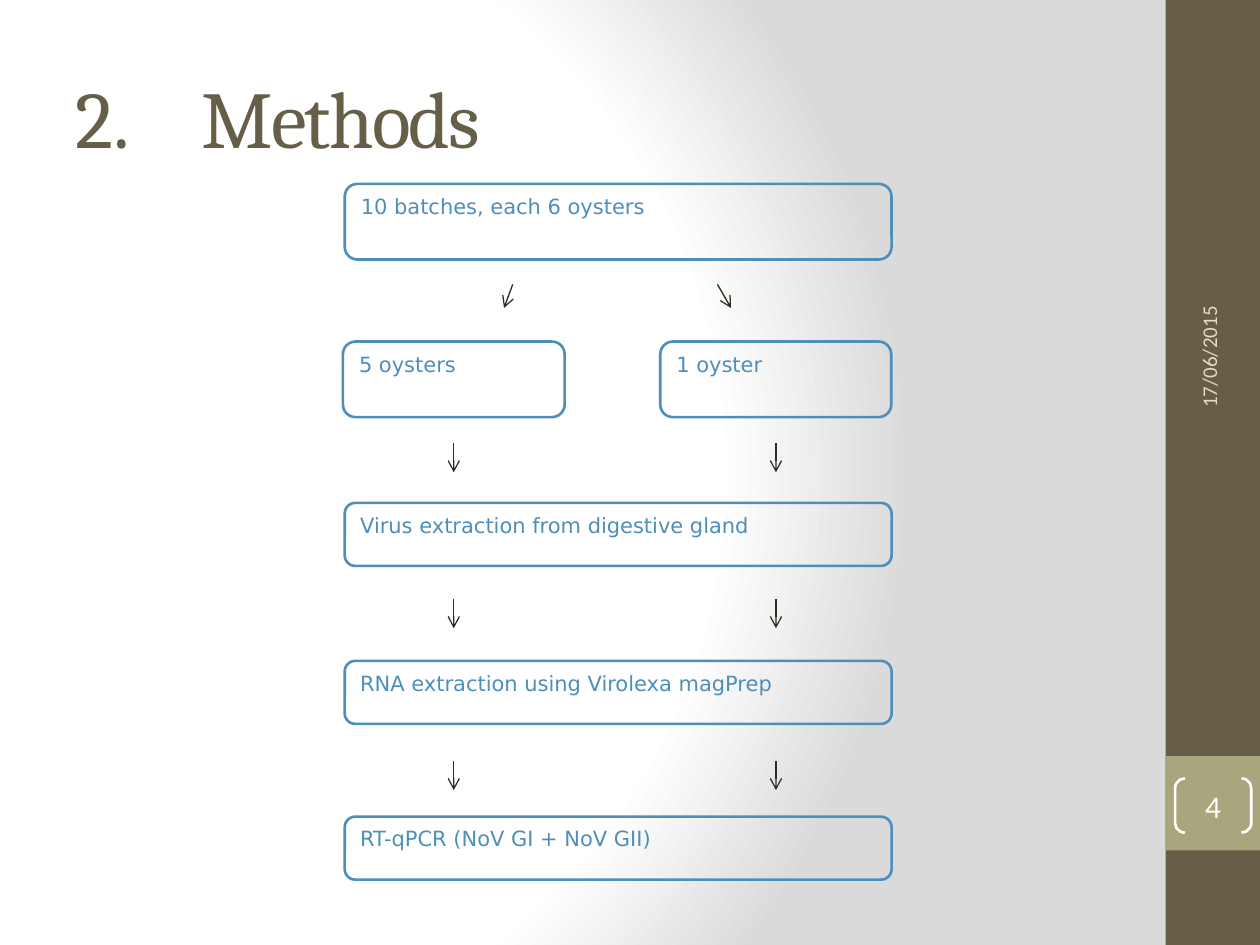
from dataclasses import dataclass

from pptx import Presentation
from pptx.dml.color import RGBColor
from pptx.enum.shapes import MSO_CONNECTOR, MSO_SHAPE
from pptx.enum.text import MSO_ANCHOR, PP_ALIGN
from pptx.oxml import parse_xml
from pptx.oxml.ns import nsdecls, qn
from pptx.oxml.xmlchemy import OxmlElement
from pptx.util import Pt

RECT, ROUND = MSO_SHAPE.RECTANGLE, MSO_SHAPE.ROUNDED_RECTANGLE
BRACKET = MSO_SHAPE.DOUBLE_BRACKET
STRAIGHT = MSO_CONNECTOR.STRAIGHT
TOP, MIDDLE = MSO_ANCHOR.TOP, MSO_ANCHOR.MIDDLE
LEFT, CENTER = PP_ALIGN.LEFT, PP_ALIGN.CENTER


@dataclass(frozen=True)
class Theme:
    brown: str = "675E47"
    olive: str = "A9A57C"
    cream: str = "DFDCB7"
    white: str = "FFFFFF"
    gray: str = "DADADA"
    blue: str = "4E8FBA"
    ink: str = "2F2B20"
    head: str = "Cambria"
    body: str = "Calibri"
    flow: str = "DejaVu Sans"
    large: float = 46
    mid: float = 18
    small: float = 12
    thick: float = 1.5
    thin: float = 0.75


def color(code):
    return RGBColor.from_string(code)


def write(shape, text, font, size, tint, align=LEFT, anchor=TOP, inset=None):
    frame = shape.text_frame
    frame.word_wrap = True
    frame.vertical_anchor = anchor
    if inset is not None:
        frame.margin_left = frame.margin_right = Pt(inset)
        frame.margin_top = frame.margin_bottom = Pt(inset)
    para = frame.paragraphs[0]
    para.alignment = align
    run = para.add_run()
    run.text = text
    run.font.name = font
    run.font.size = Pt(size)
    run.font.color.rgb = color(tint)
    return para, run


class Deck:
    def __init__(self, theme):
        self.theme = theme
        self.file = Presentation()
        self.file.slide_width, self.file.slide_height = Pt(720), Pt(540)
        self.slide = self.file.slides.add_slide(self.file.slide_layouts[6])

    def backdrop(self):
        t = self.theme
        self.slide.background.fill.solid()
        props = self.slide.element.find(".//" + qn("p:bgPr"))
        stops = "".join(
            f'<a:gs pos="{pos * 1000}"><a:srgbClr val="{code}"/></a:gs>'
            for pos, code in ((0, t.white), (75, t.white), (100, t.gray)))
        props.replace(props[0], parse_xml(
            f'<a:gradFill {nsdecls("a")} rotWithShape="1"><a:gsLst>{stops}</a:gsLst>'
            '<a:path path="circle"><a:fillToRect l="20000" t="50000" r="100000" '
            'b="50000"/></a:path></a:gradFill>'))

    def shape(self, kind, x, y, w, h, fill=None, line=None):
        item = self.slide.shapes.add_shape(kind, Pt(x), Pt(y), Pt(w), Pt(h))
        item.shadow.inherit = False
        if fill:
            item.fill.solid()
            item.fill.fore_color.rgb = color(fill)
        else:
            item.fill.background()
        if line:
            item.line.color.rgb = color(line)
            item.line.width = Pt(self.theme.thick)
        else:
            item.line.fill.background()
        return item

    def label(self, x, y, w, h, text, turn=0, **style):
        box = self.slide.shapes.add_textbox(Pt(x), Pt(y), Pt(w), Pt(h))
        box.rotation = turn
        return write(box, text, **style)

    def title(self, text, start):
        t = self.theme
        para, run = self.label(36, 21.6, 600, 90, text, font=t.head,
                               size=t.large, tint=t.brown, anchor=MIDDLE)
        run.font._element.set("spc", "-100")
        props = para._p.get_or_add_pPr()
        props.set("marL", str(Pt(72)))
        props.set("indent", str(Pt(-72)))
        number = OxmlElement("a:buAutoNum")
        number.set("type", "arabicPeriod")
        number.set("startAt", str(start))
        props.append(number)

    def step(self, x, y, w, h, text):
        t = self.theme
        box = self.shape(ROUND, x, y, w, h, line=t.blue)
        write(box, text, font=t.flow, size=t.small, tint=t.blue)

    def arrow(self, x1, y1, x2, y2):
        t = self.theme
        item = self.slide.shapes.add_connector(
            STRAIGHT, Pt(x1), Pt(y1), Pt(x2), Pt(y2))
        item.line.color.rgb = color(t.ink)
        item.line.width = Pt(t.thin)
        tip = OxmlElement("a:tailEnd")
        tip.set("type", "arrow")
        item.line._get_or_add_ln().append(tip)
        item._element.spPr.append(OxmlElement("a:effectLst"))


def main():
    t = Theme()
    deck = Deck(t)
    deck.backdrop()

    # Side bar with date and page number
    deck.shape(RECT, 666, 0, 54, 540, fill=t.brown)
    deck.shape(RECT, 666, 432, 54, 54, fill=t.olive)
    deck.label(594.7, 129.6, 192, 28.8, "17/06/2015", turn=270, font=t.body,
               size=t.small, tint=t.cream, anchor=MIDDLE)
    page = deck.shape(BRACKET, 671.5, 444.8, 43.5, 31, line=t.white)
    page.adjustments[0] = 0.18
    write(page, "4", font=t.body, size=t.mid, tint=t.white,
          align=CENTER, anchor=MIDDLE, inset=0)

    deck.title("Methods", start=2)

    # Batches and how they are split
    left, wide, tall, low = 197, 312.5, 43.2, 36
    deck.step(left, 105.1, wide, tall, "10 batches, each 6 oysters")
    deck.step(196, 195.2, 126.7, tall, "5 oysters")
    deck.step(377.3, 195.2, 132, tall, "1 oyster")
    deck.arrow(293, 162.5, 288, 176)
    deck.arrow(410, 162.5, 417.7, 176)

    # Shared steps, each reached by a pair of arrows
    steps = (
        (253.4, 287.4, "Virus extraction from digestive gland"),
        (342.5, 377.7, "RNA extraction using Virolexa magPrep"),
        (435, 466.7, "RT-qPCR (NoV GI + NoV GII)"),
    )
    for start, top, text in steps:
        for x in (259.3, 443.4):
            deck.arrow(x, start, x, start + 16.5)
        deck.step(left, top, wide, low, text)

    deck.file.save("out.pptx")


if __name__ == "__main__":
    main()
